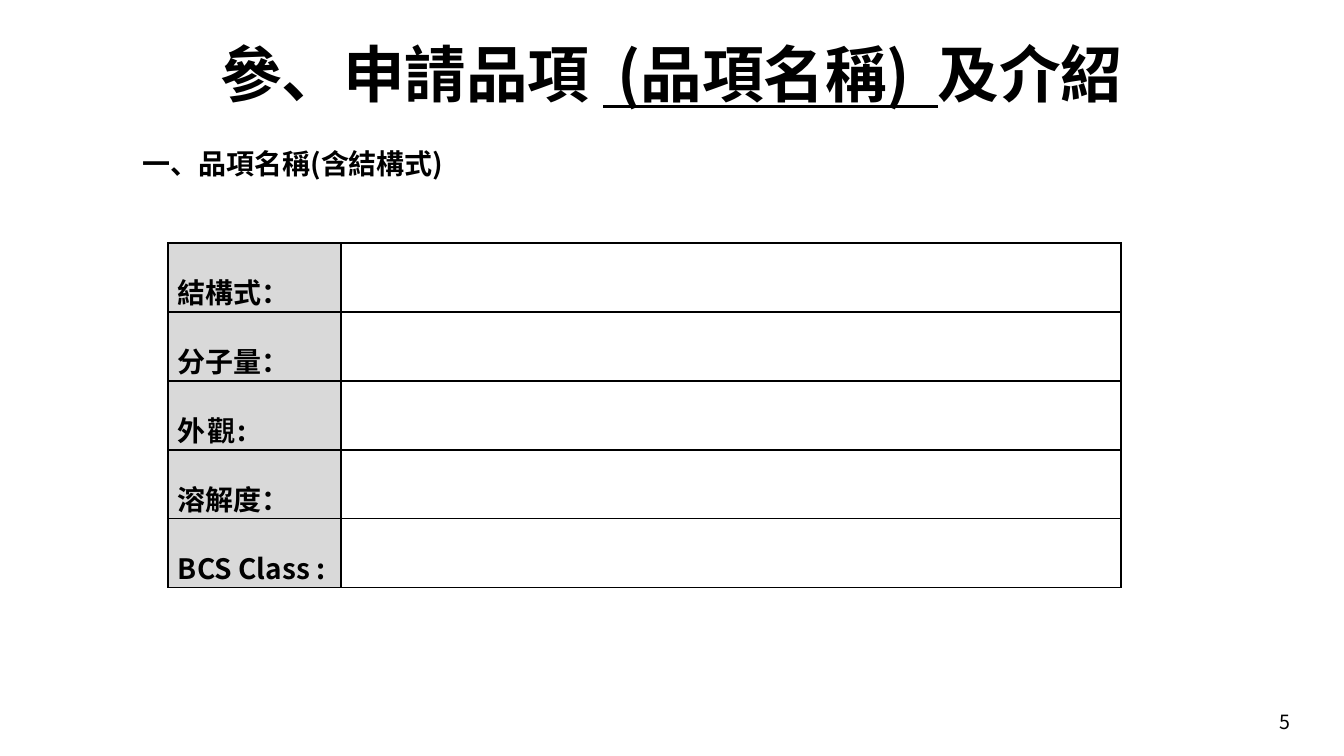
from lxml import etree
from pptx import Presentation
from pptx import util as u
from pptx.dml.color import RGBColor
from pptx.enum import text
from pptx.oxml import ns

TITLE = [("參、申請品項 ", False), (" (品項名稱)  ", True), ("及介紹", False)]
HEADING = "一、品項名稱(含結構式)"
PAGE_NUMBER = "5"
PROPERTIES = [
    [("結構式：", -10)],
    [("分子量：", -10)],
    [("外觀:", 140)],
    [("溶解度：", -20)],
    [("BCS Class ", 0), (":", -50)],
]

TITLE_BOX = (181, 35, 981, 76)
HEADING_BOX = (143, 146, 446, 35)
NUMBER_BOX = (1280, 707, 30, 29)
TABLE_LEFT, TABLE_TOP = 168, 243
COLUMN_WIDTHS = (173, 780)
ROW_HEIGHT = 69

FONT = "Noto Sans CJK SC"
BLACK = RGBColor(0x00, 0x00, 0x00)
LABEL_GRAY = RGBColor(0xD9, 0xD9, 0xD9)


def px(value):
    return u.Emu(round(value * 914400 / 100.8))


def add_span(para, words, size, bold=True, spacing=-10, underline=False):
    span = para.add_run()
    span.text = words
    span.font.size = u.Pt(size)
    span.font.bold = bold
    span.font.underline = underline
    span.font.color.rgb = BLACK
    span.font.name = FONT
    properties = span._r.get_or_add_rPr()
    properties.set("spc", str(spacing))
    etree.SubElement(properties, ns.qn("a:ea")).set("typeface", FONT)


def set_frame(box, top_inset):
    frame = box.text_frame
    frame.word_wrap = True
    frame.auto_size = text.MSO_AUTO_SIZE.NONE
    frame.vertical_anchor = text.MSO_ANCHOR.TOP
    frame.margin_left = frame.margin_right = frame.margin_bottom = 0
    frame.margin_top = px(top_inset)
    return frame.paragraphs[0]


def add_text(page, bounds, words, size, bold, top_inset):
    box = page.shapes.add_textbox(*map(px, bounds))
    add_span(set_frame(box, top_inset), words, size, bold)


def add_borders(cell):
    properties = cell._tc.get_or_add_tcPr()
    for side in ("lnL", "lnR", "lnT", "lnB"):
        line = etree.SubElement(properties, ns.qn(f"a:{side}"), w=str(u.Pt(1)))
        fill = etree.SubElement(line, ns.qn("a:solidFill"))
        etree.SubElement(fill, ns.qn("a:srgbClr"), val=str(BLACK))


def add_property_table(page):
    size = (sum(COLUMN_WIDTHS), ROW_HEIGHT * len(PROPERTIES))
    frame = page.shapes.add_table(len(PROPERTIES), len(COLUMN_WIDTHS),
                                  *map(px, (TABLE_LEFT, TABLE_TOP, *size)))
    table = frame.table
    table.first_row = table.horz_banding = False
    for column, width in zip(table.columns, COLUMN_WIDTHS):
        column.width = px(width)
    for row, label in zip(table.rows, PROPERTIES):
        row.height = px(ROW_HEIGHT)
        label_cell, value_cell = row.cells
        for cell in (label_cell, value_cell):
            add_borders(cell)
            cell.margin_left = px(10)
            cell.margin_right = cell.margin_top = cell.margin_bottom = 0
            cell.vertical_anchor = text.MSO_ANCHOR.BOTTOM
        label_cell.fill.solid()
        label_cell.fill.fore_color.rgb = LABEL_GRAY
        value_cell.fill.background()
        for words, spacing in label:
            add_span(label_cell.text_frame.paragraphs[0], words, 20, spacing=spacing)


def main():
    deck = Presentation()
    deck.slide_width, deck.slide_height = px(1344), px(756)
    page = deck.slides.add_slide(deck.slide_layouts[5])

    title = page.shapes.title
    title.left, title.top, title.width, title.height = map(px, TITLE_BOX)
    para = set_frame(title, 1)
    para.alignment = text.PP_ALIGN.CENTER
    for words, underline in TITLE:
        add_span(para, words, 44, underline=underline)

    add_text(page, NUMBER_BOX, PAGE_NUMBER, 14, False, 3)
    add_text(page, HEADING_BOX, HEADING, 20, True, 1)
    add_property_table(page)
    deck.save("out.pptx")


if __name__ == "__main__":
    main()
